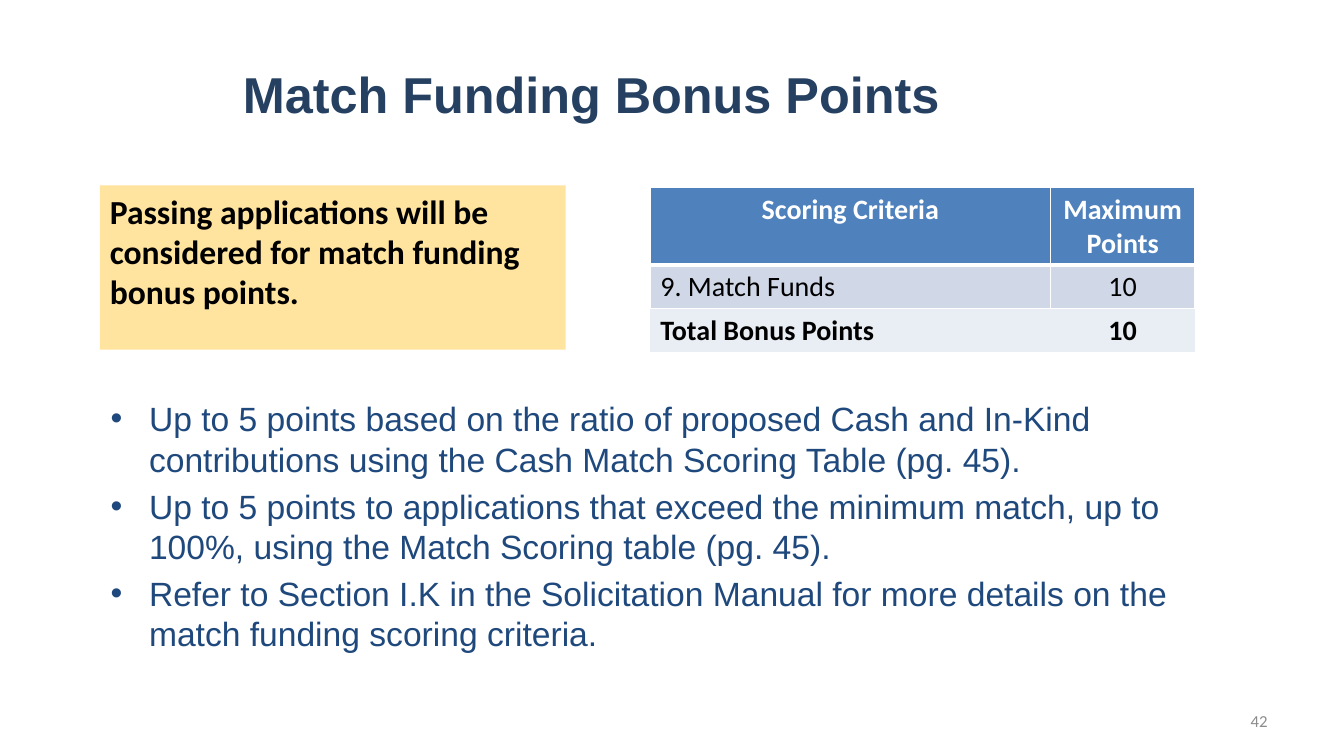
from lxml import etree
from pptx import Presentation
from pptx.dml.color import RGBColor
from pptx.enum.shapes import MSO_SHAPE
from pptx.enum.text import MSO_ANCHOR, PP_ALIGN
from pptx.oxml.ns import qn
from pptx.util import Inches, Pt

RECT = MSO_SHAPE.RECTANGLE
TOP, MIDDLE = MSO_ANCHOR.TOP, MSO_ANCHOR.MIDDLE
LEFT, CENTER, RIGHT = PP_ALIGN.LEFT, PP_ALIGN.CENTER, PP_ALIGN.RIGHT

COLORS = {
    "title": "254061",
    "body": "1F497D",
    "callout": "FFE49F",
    "header": "4F81BD",
    "band": "D0D8E8",
    "total": "E9EDF4",
    "white": "FFFFFF",
    "black": "000000",
    "number": "8C8C8C",
}


class SlideBuilder:
    heading_font = "Arial"
    text_font = "Calibri"

    def __init__(self, slide):
        self.s = slide

    def color(self, name):
        return RGBColor.from_string(COLORS[name])

    def format(self, p, size, color, font, bold=False, align=LEFT):
        p.alignment = align
        for r in p.runs:
            r.font.size = Pt(size)
            r.font.name = font
            r.font.bold = bold
            r.font.color.rgb = self.color(color)

    def text(self, box, text, size, color, font, bold=False, align=LEFT, anchor=TOP):
        sp = self.s.shapes.add_textbox(*map(Inches, box))
        tf = sp.text_frame
        tf.word_wrap = True
        tf.vertical_anchor = anchor
        tf.text = text
        for p in tf.paragraphs:
            self.format(p, size, color, font, bold, align)
        return tf

    def callout(self, box, text):
        sp = self.s.shapes.add_shape(RECT, *map(Inches, box))
        sp.shadow.inherit = False
        sp.fill.solid()
        sp.fill.fore_color.rgb = self.color("callout")
        sp.line.fill.background()
        tf = sp.text_frame
        tf.word_wrap = True
        tf.vertical_anchor = TOP
        tf.text = text
        self.format(tf.paragraphs[0], 24, "black", self.text_font, bold=True)

    def bullets(self, box, items):
        tf = self.text(box, "\n".join(items), 24, "body", self.heading_font)
        for i, p in enumerate(tf.paragraphs):
            pPr = p._p.get_or_add_pPr()
            pPr.set("marL", str(Inches(0.38)))
            pPr.set("indent", str(Inches(-0.38)))
            etree.SubElement(pPr, qn("a:buFont"), typeface="Arial")
            etree.SubElement(pPr, qn("a:buChar"), char="•")
            if i:
                p.space_before = Pt(4.8)

    def borders(self, cell, widths):
        tcPr = cell._tc.get_or_add_tcPr()
        for side, width in zip("LRTB", widths):
            ln = etree.SubElement(tcPr, qn(f"a:ln{side}"), w=str(Pt(width)))
            if width:
                fill = etree.SubElement(ln, qn("a:solidFill"))
                etree.SubElement(fill, qn("a:srgbClr"), val=COLORS["white"])
            else:
                etree.SubElement(ln, qn("a:noFill"))

    def table(self, box, columns, heights, rows, styles):
        shape = self.s.shapes.add_table(len(rows), len(columns), *map(Inches, box))
        table = shape.table
        table.first_row = table.horz_banding = False
        for column, width in zip(table.columns, columns):
            column.width = Inches(width)
        for i, (values, style) in enumerate(zip(rows, styles)):
            fill, color, bold, widths = style
            table.rows[i].height = Inches(heights[i])
            for j, value in enumerate(values):
                cell = table.cell(i, j)
                cell.text = value
                self.borders(cell, widths)
                cell.fill.solid()
                cell.fill.fore_color.rgb = self.color(fill)
                align = CENTER if i == 0 or j else LEFT
                self.format(cell.text_frame.paragraphs[0], 20, color,
                            self.text_font, bold, align)


def main():
    prs = Presentation()
    prs.slide_width, prs.slide_height = Inches(13.33), Inches(7.5)
    b = SlideBuilder(prs.slides.add_slide(prs.slide_layouts[6]))

    b.text((2.31, 0.3, 7.81, 1.25), "Match Funding Bonus Points", 36, "title",
           b.heading_font, bold=True, anchor=MIDDLE)
    b.callout((0.99, 1.84, 4.62, 1.63),
              "Passing applications will be considered for match funding bonus points.")
    b.table(
        (6.45, 1.86, 5.4, 1.58), (3.97, 1.43), (0.74, 0.42, 0.42),
        [("Scoring Criteria", "Maximum Points"),
         ("9. Match Funds", "10"),
         ("Total Bonus Points", "10")],
        [("header", "white", True, (1, 1, 1, 3)),
         ("band", "black", False, (1, 1, 3, 1)),
         ("total", "black", True, (0, 0, 1, 0))],
    )
    b.bullets((1, 3.9, 11.34, 2.65), [
        "Up to 5 points based on the ratio of proposed Cash and In-Kind "
        "contributions using the Cash Match Scoring Table (pg. 45).",
        "Up to 5 points to applications that exceed the minimum match, up to "
        "100%, using the Match Scoring table (pg. 45).",
        "Refer to Section I.K in the Solicitation Manual for more details on the "
        "match funding scoring criteria.",
    ])
    b.text((9.56, 6.95, 3.11, 0.4), "42", 12, "number", b.text_font,
           align=RIGHT, anchor=MIDDLE)

    prs.save("out.pptx")


if __name__ == "__main__":
    main()
